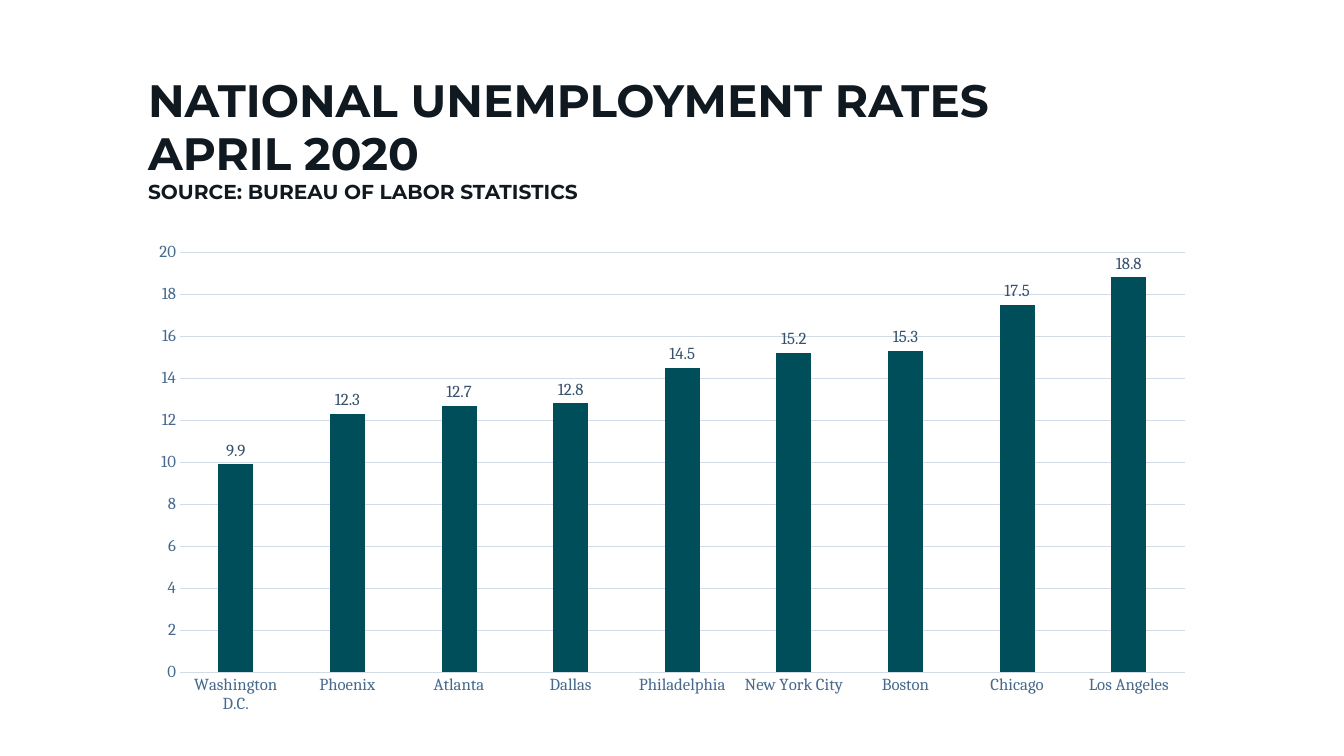
from copy import deepcopy

from pptx import Presentation
from pptx.chart.data import CategoryChartData
from pptx.dml.color import RGBColor
from pptx.enum.chart import XL_CHART_TYPE, XL_LABEL_POSITION, XL_TICK_MARK
from pptx.enum.text import MSO_ANCHOR, MSO_AUTO_SIZE, PP_ALIGN
from pptx.util import Pt

COLUMN = XL_CHART_TYPE.COLUMN_CLUSTERED
ABOVE = XL_LABEL_POSITION.OUTSIDE_END
NO_TICK = XL_TICK_MARK.NONE
BOTTOM = MSO_ANCHOR.BOTTOM
NO_FIT = MSO_AUTO_SIZE.NONE
LEFT = PP_ALIGN.LEFT

HEAD = ["NATIONAL UNEMPLOYMENT RATES", "APRIL 2020"]
SOURCE = "SOURCE: BUREAU OF LABOR STATISTICS"
RATES = {
    "Washington D.C.": 9.9,
    "Phoenix": 12.3,
    "Atlanta": 12.7,
    "Dallas": 12.8,
    "Philadelphia": 14.5,
    "New York City": 15.2,
    "Boston": 15.3,
    "Chicago": 17.5,
    "Los Angeles": 18.8,
}
COLORS = {
    "ink": "101820",
    "axis": "46698C",
    "label": "37526D",
    "grid": "D1DCE8",
    "bar": "004E59",
}
SLIDE = (1344, 756)
TITLE_BOX = (138, 78, 1068, 131)
CHART_BOX = (138, 233, 1068, 491)
SCALE = 914400 / 100.8


def emu(box):
    return [round(v * SCALE) for v in box]


def rgb(name):
    return RGBColor.from_string(COLORS[name])


def style(font, size, color, face="Cambria", bold=False):
    font.size = Pt(size)
    font.name = face
    font.bold = bold
    font.color.rgb = rgb(color)


def rule(line):
    line.color.rgb = rgb("grid")
    line.width = Pt(0.75)


def write(para, text, end=False, **form):
    run = para.add_run()
    run.text = text
    style(run.font, **form)
    if end:
        para.add_line_break()
        para._p[-1].append(deepcopy(run.font._element))


def add_title(slide):
    title = slide.shapes.title
    title.left, title.top, title.width, title.height = emu(TITLE_BOX)
    frame = title.text_frame
    frame.word_wrap = True
    frame.auto_size = NO_FIT
    frame.vertical_anchor = BOTTOM
    para = frame.paragraphs[0]
    para.alignment = LEFT
    para.line_spacing = 0.96
    form = {"color": "ink", "face": "Montserrat", "bold": True}
    for text in HEAD:
        write(para, text, end=True, size=32.4, **form)
    write(para, SOURCE, size=14.4, **form)


def add_rates(slide):
    data = CategoryChartData()
    data.categories = list(RATES)
    data.add_series("Series 1", list(RATES.values()))
    chart = slide.shapes.add_chart(COLUMN, *emu(CHART_BOX), data).chart
    chart.has_title = False
    chart.has_legend = False
    style(chart.font, 10, "ink")

    for axis in (chart.category_axis, chart.value_axis):
        axis.major_tick_mark = NO_TICK
        axis.minor_tick_mark = NO_TICK
        style(axis.tick_labels.font, 12, "axis")
    rule(chart.category_axis.format.line)
    scale = chart.value_axis
    scale.minimum_scale, scale.maximum_scale, scale.major_unit = 0, 20, 2
    scale.format.line.fill.background()
    rule(scale.major_gridlines.format.line)

    plot = chart.plots[0]
    plot.gap_width = 219
    plot.overlap = -27
    plot.vary_by_categories = False
    bars = plot.series[0]
    bars.format.fill.solid()
    bars.format.fill.fore_color.rgb = rgb("bar")
    labels = bars.data_labels
    labels.show_value = True
    labels.position = ABOVE
    style(labels.font, 12, "label")


def main():
    deck = Presentation()
    deck.slide_width, deck.slide_height = emu(SLIDE)
    slide = deck.slides.add_slide(deck.slide_layouts[5])
    add_title(slide)
    add_rates(slide)
    deck.save("out.pptx")


if __name__ == "__main__":
    main()
